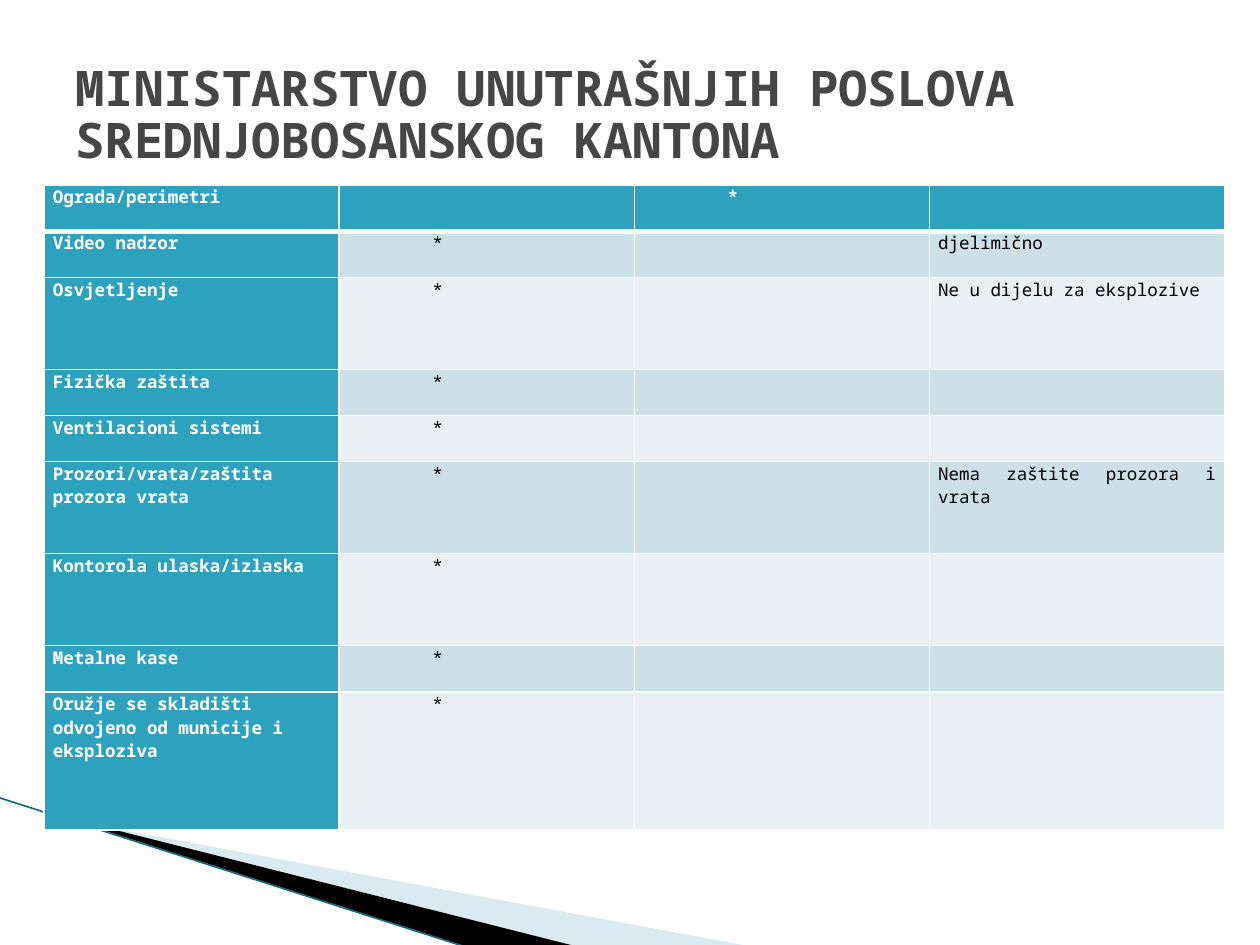
from dataclasses import dataclass

from lxml.etree import SubElement
from pptx import Presentation
from pptx.dml.color import RGBColor
from pptx.enum.shapes import MSO_CONNECTOR as Connector
from pptx.enum.text import MSO_ANCHOR as Anchor, PP_ALIGN as Align
from pptx.oxml import parse_xml
from pptx.oxml.ns import nsdecls, qn
from pptx.util import Inches, Pt


@dataclass(frozen=True)
class Theme:
    font: str = "Noto Sans Mono"
    title_size: float = 28
    body_size: float = 10
    title: str = "464646"
    accent: str = "2DA2BF"
    band_dark: str = "CDE0E8"
    band_light: str = "E8F0F4"
    white: str = "FFFFFF"
    black: str = "000000"
    wedge: str = "A0CBDC"
    edge: str = "1A6C82"


class SlideBuilder:
    """Draws styled elements on one slide."""

    def __init__(self, slide, theme):
        self.slide = slide
        self.theme = theme

    def style(self, para, size, color, bold):
        for span in para.runs:
            span.font.name = self.theme.font
            span.font.size = Pt(size)
            span.font.bold = bold
            span.font.color.rgb = RGBColor.from_string(color)

    def wedge(self, points, color, opacity=100):
        corners = [(Inches(x), Inches(y)) for x, y in points]
        builder = self.slide.shapes.build_freeform(*corners[0])
        builder.add_line_segments(corners[1:], close=True)
        shape = builder.convert_to_shape()
        shape.shadow.inherit = False
        shape.fill.solid()
        shape.fill.fore_color.rgb = RGBColor.from_string(color)
        shape.line.fill.background()
        if opacity < 100:
            tint = shape.fill._xPr.find(qn("a:solidFill"))[0]
            SubElement(tint, qn("a:alpha"), val=str(opacity * 1000))

    def line(self, start, end, color, width):
        ends = [Inches(value) for value in (*start, *end)]
        line = self.slide.shapes.add_connector(Connector.STRAIGHT, *ends)
        line.line.color.rgb = RGBColor.from_string(color)
        line.line.width = Pt(width)
        SubElement(line._element.spPr, qn("a:effectLst"))

    def title(self, text, left, top, width, height):
        box = self.slide.shapes.add_textbox(
            Inches(left), Inches(top), Inches(width), Inches(height))
        frame = box.text_frame
        frame.word_wrap = True
        frame.vertical_anchor = Anchor.MIDDLE
        frame.text = text
        para = frame.paragraphs[0]
        para.line_spacing = 0.9
        self.style(para, self.theme.title_size, self.theme.title, True)

    def borders(self, cell, widths):
        properties = cell._tc.get_or_add_tcPr()
        for index, (side, width) in enumerate(widths.items()):
            properties.insert(index, parse_xml(
                f'<a:ln{side} {nsdecls("a")} w="{Pt(width)}"><a:solidFill>'
                f'<a:srgbClr val="{self.theme.white}"/></a:solidFill></a:ln{side}>'))

    def cell(self, cell, text, fill, color, bold, align):
        mark = text == "*"
        cell.margin_left = Inches(0.74 if mark else 0.07)
        cell.margin_right = Inches(0.07)
        cell.margin_top = cell.margin_bottom = 0
        cell.fill.solid()
        cell.fill.fore_color.rgb = RGBColor.from_string(fill)
        cell.text = text
        para = cell.text_frame.paragraphs[0]
        para.alignment = align
        self.style(para, self.theme.body_size, color, bold)

    def table(self, rows, left, top, width, height):
        theme = self.theme
        columns = len(rows[0][1])
        units = sum(span for span, _ in rows)
        table = self.slide.shapes.add_table(
            len(rows), columns, Inches(left), Inches(top),
            Inches(width), Inches(height)).table
        table.horz_banding = False
        for column in table.columns:
            column.width = Inches(width / columns)
        for row, (span, texts) in enumerate(rows):
            table.rows[row].height = Inches(height * span / units)
            band = theme.band_dark if row % 2 else theme.band_light
            for column, text in enumerate(texts):
                cell = table.cell(row, column)
                heading = row == 0 or column == 0
                ragged = text.startswith(("djelimično", "Oružje"))
                self.cell(cell, text, theme.accent if heading else band,
                          theme.white if heading else theme.black, heading,
                          Align.LEFT if ragged else Align.JUSTIFY)
                self.borders(cell, {"L": 1, "R": 1, "T": 3 if row == 1 else 1,
                                    "B": 3 if row == 0 else 1})


ROWS = [
    (1, ["Ograda/perimetri", "", "*", ""]),
    (1, ["Video nadzor", "*", "", "djelimično"]),
    (2, ["Osvjetljenje", "*", "", "Ne u dijelu za eksplozive"]),
    (1, ["Fizička zaštita", "*", "", ""]),
    (1, ["Ventilacioni sistemi", "*", "", ""]),
    (2, ["Prozori/vrata/zaštita prozora vrata", "*", "",
         "Nema zaštite prozora i vrata"]),
    (2, ["Kontorola ulaska/izlaska", "*", "", ""]),
    (1, ["Metalne kase", "*", "", ""]),
    (3, ["Oružje se skladišti odvojeno od municije i eksploziva", "*", "", ""]),
]


def main():
    theme = Theme()
    deck = Presentation()
    deck.slide_width, deck.slide_height = Inches(10), Inches(7.5)
    page = SlideBuilder(deck.slides.add_slide(deck.slide_layouts[6]), theme)
    page.wedge([(0.55, 6.51), (5.95, 7.51), (4.56, 7.51), (0.55, 6.5)],
               theme.wedge, opacity=40)
    page.wedge([(0.53, 6.49), (4.57, 7.51), (3.72, 7.52), (0.54, 6.5)],
               theme.black)
    page.line((-0.01, 6.33), (3.71, 7.52), theme.edge, 0.95)
    page.table(ROWS, 0.35, 1.47, 9.37, 5.12)
    page.title("MINISTARSTVO UNUTRAŠNJIH POSLOVA SREDNJOBOSANSKOG KANTONA",
               0.5, 0.3, 9, 1.25)
    deck.save("out.pptx")


if __name__ == "__main__":
    main()
